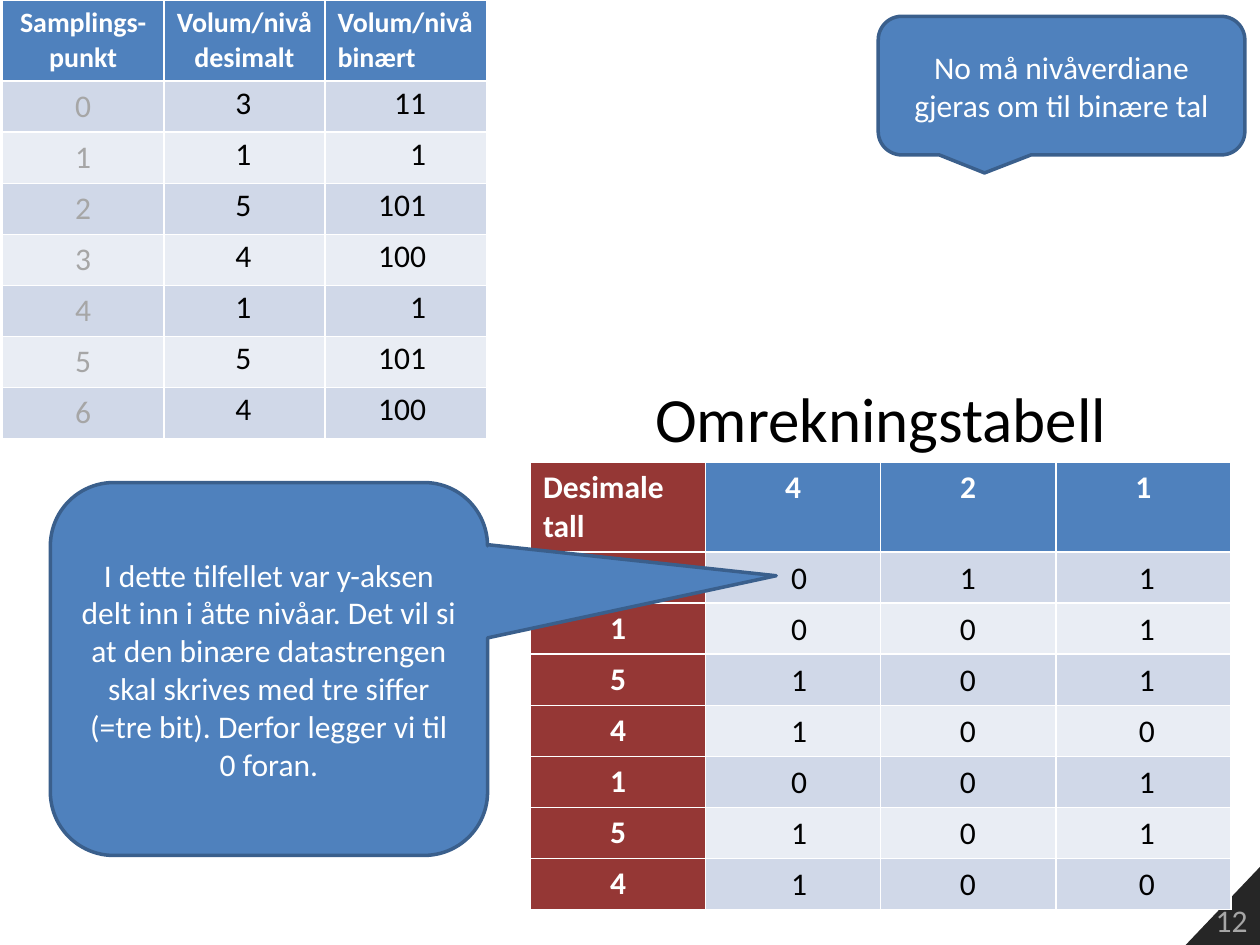
from pptx import Presentation
from pptx.dml.color import RGBColor
from pptx.enum import shapes, text
from pptx.util import Inches, Pt

BLUE = RGBColor(0x4F, 0x81, 0xBD)
EDGE = RGBColor(0x3A, 0x5F, 0x8C)
RED = RGBColor(0x95, 0x37, 0x35)
BANDS = [RGBColor(0xD0, 0xD8, 0xE8), RGBColor(0xE9, 0xED, 0xF4)]
DARK = RGBColor(0x26, 0x26, 0x26)
GREY = RGBColor(0xA6, 0xA6, 0xA6)
WHITE = RGBColor(0xFF, 0xFF, 0xFF)
BLACK = RGBColor(0, 0, 0)

LEFT, CENTER, RIGHT = text.PP_ALIGN.LEFT, text.PP_ALIGN.CENTER, text.PP_ALIGN.RIGHT
ROW_H = 0.405
LEVELS = [3, 1, 5, 4, 1, 5, 4]


def write(tf, lines, color, size=18, align=CENTER, bold=False):
    for i, line in enumerate(lines):
        p = tf.add_paragraph() if i else tf.paragraphs[0]
        p.alignment = align
        r = p.add_run()
        r.text = line
        r.font.name, r.font.size, r.font.bold = "Calibri", Pt(size), bold
        r.font.color.rgb = color


def add_grid(x, y, col_w, header_h, headers, size, first_column, text_color, fill=None):
    """Table with a header, a filled first column and banded empty cells."""
    n_rows, n_cols = len(first_column) + 1, len(headers)
    table = s.shapes.add_table(n_rows, n_cols, Inches(x), Inches(y), Inches(col_w * n_cols),
                               Inches(header_h + ROW_H * (n_rows - 1))).table
    for col in table.columns:
        col.width = Inches(col_w)
    for i, row in enumerate(table.rows):
        row.height = Inches(ROW_H if i else header_h)
        for j, cell in enumerate(row.cells):
            cell.fill.solid()
            color = BANDS[(i - 1) % 2] if i else BLUE
            cell.fill.fore_color.rgb = fill if fill and j == 0 else color
            if i == 0:
                lines, align = headers[j]
                write(cell.text_frame, lines, WHITE, size, align, True)
            elif j == 0:
                write(cell.text_frame, [str(first_column[i - 1])], text_color, bold=bool(fill))


prs = Presentation()
prs.slide_width, prs.slide_height = Inches(10), Inches(7.5)
s = prs.slides.add_slide(prs.slide_layouts[5])

# Page number corner
fb = s.shapes.build_freeform(Inches(9.41), Inches(7.5))
fb.add_line_segments([(Inches(10), Inches(6.88)), (Inches(10), Inches(7.5))])
corner = fb.convert_to_shape()
corner.shadow.inherit = False
corner.fill.solid()
corner.fill.fore_color.rgb = DARK
corner.line.fill.background()
corner.text_frame.vertical_anchor = text.MSO_ANCHOR.BOTTOM
write(corner.text_frame, ["12"], GREY, align=RIGHT)

# Tables
add_grid(0.02, 0, 1.28, 0.64,
         [(["Samplings-punkt"], CENTER), (["Volum/nivå", "desimalt"], CENTER),
          (["Volum/nivå", "binært"], LEFT)],
         16, range(len(LEVELS)), GREY)
add_grid(4.21, 3.67, 1.39, 0.7,
         [(["Desimale", "tall"], LEFT), (["4"], CENTER), (["2"], CENTER), (["1"], CENTER)],
         18, LEVELS, WHITE, RED)

# Numbers over the table cells: decimal, binary, and one box per bit
for i, level in enumerate(LEVELS):
    upper, lower = 0.61 + ROW_H * i, 4.38 + ROW_H * i
    numbers = [(1.77, upper, 0.39, str(level), LEFT),
               (2.85, upper, 0.63, f"{level:b}", RIGHT)]
    numbers += [(x, lower, 0.39, bit, LEFT) for x, bit in zip((6.18, 7.52, 8.94), f"{level:03b}")]
    for x, y, w, value, align in numbers:
        tf = s.shapes.add_textbox(Inches(x), Inches(y), Inches(w), Inches(0.4)).text_frame
        tf.word_wrap = True
        tf.auto_size = text.MSO_AUTO_SIZE.SHAPE_TO_FIT_TEXT
        write(tf, [value], BLACK, align=align)

# Title of the conversion table
title = s.shapes.title
title.left, title.top, title.width, title.height = Inches(2.49), Inches(2.96), Inches(9), Inches(0.94)
title.text_frame.vertical_anchor = text.MSO_ANCHOR.TOP
write(title.text_frame, ["Omrekningstabell"], BLACK, 36)

# Callouts: box, pointer tip and corner radius, text
callouts = [
    ((6.97, 0.13, 2.91, 1.1), (-0.21, 0.63, 0.17),
     "No må nivåverdiane gjeras om til binære tal"),
    ((0.4, 3.83, 3.47, 2.96), (1.16, -0.25, 0.17),
     "I dette tilfellet var y-aksen delt inn i åtte nivåar. Det vil si at den binære "
     "datastrengen skal skrives med tre siffer (=tre bit). Derfor legger vi til 0 foran."),
]
for box, adjust, words in callouts:
    sp = s.shapes.add_shape(shapes.MSO_SHAPE.ROUNDED_RECTANGULAR_CALLOUT, *map(Inches, box))
    for k, value in enumerate(adjust):
        sp.adjustments[k] = value
    sp.shadow.inherit = False
    sp.fill.solid()
    sp.fill.fore_color.rgb = BLUE
    sp.line.color.rgb = EDGE
    sp.line.width = Pt(2)
    sp.text_frame.word_wrap = True
    sp.text_frame.vertical_anchor = text.MSO_ANCHOR.MIDDLE
    write(sp.text_frame, [words], WHITE)

prs.save("out.pptx")
